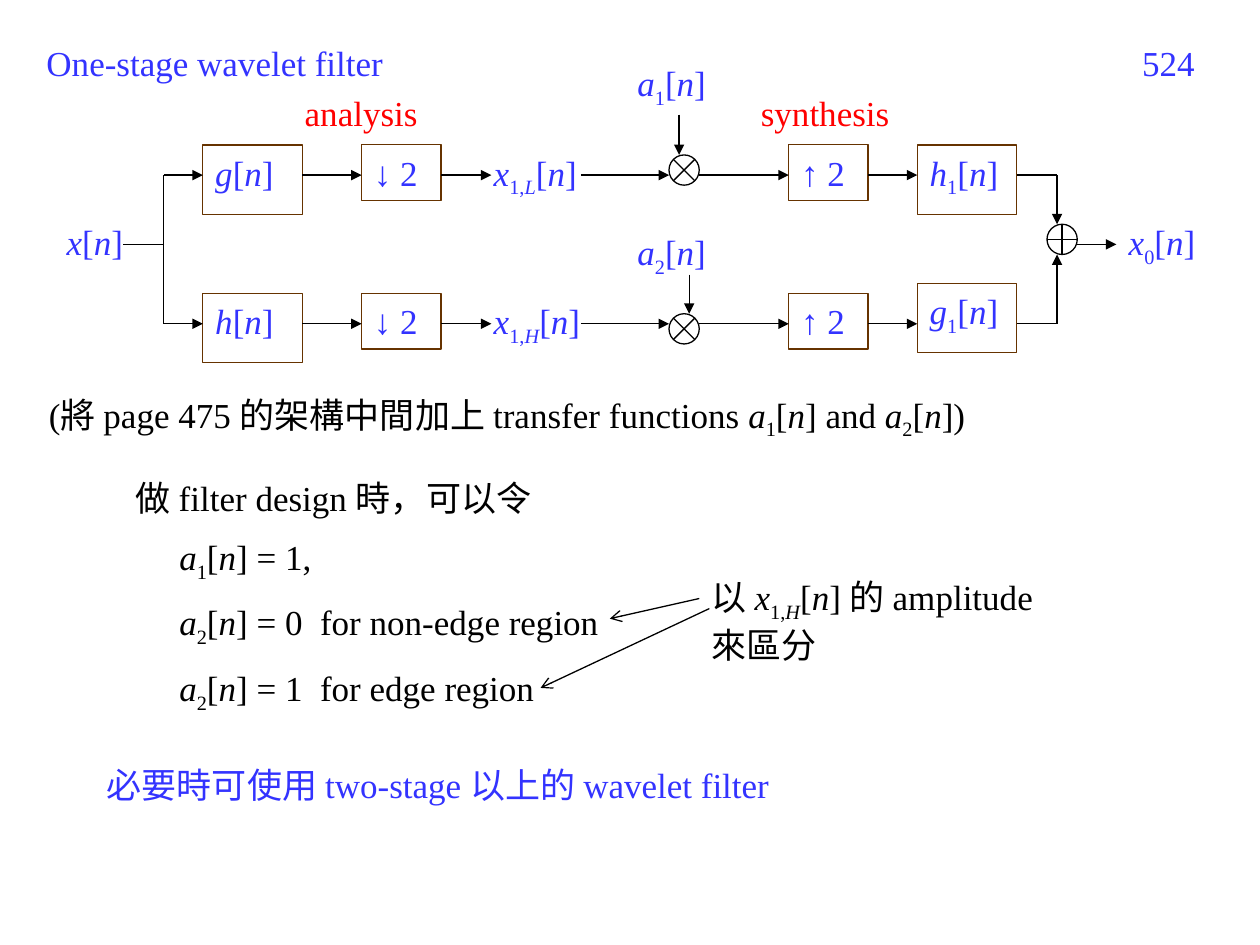
from pptx import Presentation, util as u
from pptx.dml.color import RGBColor
from pptx.enum import shapes as kinds, text as txt
from pptx.oxml.ns import qn
from lxml import etree

THEME = {
    "font": "Times New Roman", "size": u.Pt(20), "line": u.Pt(0.75), "gap": u.Pt(10),
    "blue": RGBColor(0x33, 0x33, 0xFF), "red": RGBColor(0xFF, 0, 0),
    "black": RGBColor(0, 0, 0), "brown": RGBColor(0x66, 0x33, 0),
}

deck = Presentation()
deck.slide_width, deck.slide_height = u.Inches(10), u.Inches(7.5)
COL, ROW = deck.slide_width / 100, deck.slide_height / 75
slide = deck.slides.add_slide(deck.slide_layouts[6])


def place(area, lines=(), ink="blue", preset=None, outline="black", align="LEFT", indent=0):
    left, top, width, height = area
    bounds = [round(n) for n in (left * COL, top * ROW, width * COL, height * ROW)]
    if preset:
        item = slide.shapes.add_shape(preset, *bounds)
        item.shadow.inherit = False
        item.fill.background()
        item.line.color.rgb = THEME[outline]
        item.line.width = THEME["line"]
    else:
        item = slide.shapes.add_textbox(*bounds)
    frame = item.text_frame
    frame.word_wrap = True
    frame.vertical_anchor = txt.MSO_ANCHOR.TOP
    for number, line in enumerate(lines):
        paragraph = frame.add_paragraph() if number else frame.paragraphs[0]
        paragraph.alignment = txt.PP_ALIGN[align]
        if number:
            paragraph.space_before = THEME["gap"]
            paragraph._p.get_or_add_pPr().set("marL", str(round(indent * COL)))
        for piece in line.split("|"):
            run = paragraph.add_run()
            run.text = piece.lstrip("_/")
            font = run.font
            font.name, font.size = THEME["font"], THEME["size"]
            font.color.rgb = THEME[ink]
            font.italic = piece.startswith(("/", "_/"))
            if piece.startswith("_"):
                run._r.get_or_add_rPr().set("baseline", "-25000")


def connect(x1, y1, x2, y2, head="triangle"):
    ends = [round(n) for n in (x1 * COL, y1 * ROW, x2 * COL, y2 * ROW)]
    wire = slide.shapes.add_connector(kinds.MSO_CONNECTOR.STRAIGHT, *ends)
    wire.line.color.rgb = THEME["black"]
    wire.line.width = THEME["line"]
    if head:
        etree.SubElement(wire.line._get_or_add_ln(), qn("a:tailEnd"), type=head)
    etree.SubElement(wire._element.spPr, qn("a:effectLst"))


BOX = kinds.MSO_SHAPE.RECTANGLE
TIMES = kinds.MSO_SHAPE.FLOWCHART_SUMMING_JUNCTION
PLUS = kinds.MSO_SHAPE.FLOWCHART_OR
SPLIT, FILTER, DOWN, BAND, GAIN, UP, INVERSE, JOIN = 13, 16.1, 28.7, 38.2, 53.1, 62.6, 72.8, 83.9
FILTER_W, RATE_W, NODE = 7.9, 6.3, 2.4
MIDDLE = 19.4

place((2.7, 2.8, 37.8, 4.4), ["One-stage wavelet filter"])
place((87, 2.8, 8.8, 5.2), ["524"], align="RIGHT")
for left, stage in ((23.2, "analysis"), (59.4, "synthesis")):
    place((left, 6.8, 14.2, 4.3), [stage], "red")

place((4.3, 17, 10.2, 4.3), ["/x|[|/n|]"])
place((88.6, 17, 9, 4.3), ["/x|_0|[|/n|]"])
connect(9.8, MIDDLE, SPLIT, MIDDLE, None)
connect(SPLIT, 13.9, SPLIT, 25.7, None)

branches = (
    (11.5, "/g|[|/n|]", "L", "/h|_1|[|/n|]", 11.5, "1", 4.4, 53.9, 9.1, 12.3, 17.8),
    (23.3, "/h|[|/n|]", "H", "/g|_1|[|/n|]", 22.5, "2", 17.8, 54.7, 21.8, 24.9, 20.2),
)
for top, analysis, band, synthesis, inverse_top, index, gain_top, feed, feed_top, node_top, join_end in branches:
    axis = top + 2.4
    place((FILTER, top, FILTER_W, 5.5), [analysis], preset=BOX, outline="brown")
    place((DOWN, top, RATE_W, 4.4), ["↓ 2"], preset=BOX, outline="brown")
    place((BAND, top, 14.2, 4.3), [f"/x|_1,|_/{band}|[|/n|]"])
    place((49.6, gain_top, 9.9, 4.3), [f"/a|_{index}|[|/n|]"])
    place((GAIN, node_top, NODE, NODE), preset=TIMES)
    place((UP, top, RATE_W, 4.4), ["↑ 2"], preset=BOX, outline="brown")
    place((INVERSE, inverse_top, FILTER_W, 5.5), [synthesis], preset=BOX, outline="brown")
    for start, end in ((SPLIT, FILTER), (FILTER + FILTER_W, DOWN), (DOWN + RATE_W, 39),
                       (46.1, GAIN), (GAIN + NODE, UP), (UP + RATE_W, INVERSE)):
        connect(start, axis, end, axis)
    connect(INVERSE + FILTER_W, axis, JOIN, axis, None)
    connect(JOIN, axis, JOIN, join_end)
    connect(feed, feed_top, feed, node_top)

place((83.1, 17.8, NODE, NODE), preset=PLUS)
connect(85.4, MIDDLE, 88.6, MIDDLE)

place((2.9, 30.7, 75.3, 4.4),
      ["(將 page 475 的架構中間加上 transfer functions |/a|_1|[|/n|] and |/a|_2|[|/n|])"], "black")
place((9.8, 37.3, 80.3, 19.3),
      ["做 filter design 時，可以令", "/a|_1|[|/n|] = 1,",
       "/a|_2|[|/n|] = 0  for non-edge region", "/a|_2|[|/n|] = 1  for edge region"],
      "black", indent=3.45)
place((55.5, 45.2, 29.9, 7.7), ["以 |/x|_1,|_/H|[|/n|] 的 amplitude 來區分"], "black")
connect(55.5, 47.5, 48.4, 49.1, "arrow")
connect(56.3, 48.3, 42.9, 54.6, "arrow")
place((7.5, 60.1, 69.3, 4.4), ["必要時可使用 two-stage 以上的 wavelet filter"])

deck.save("out.pptx")
